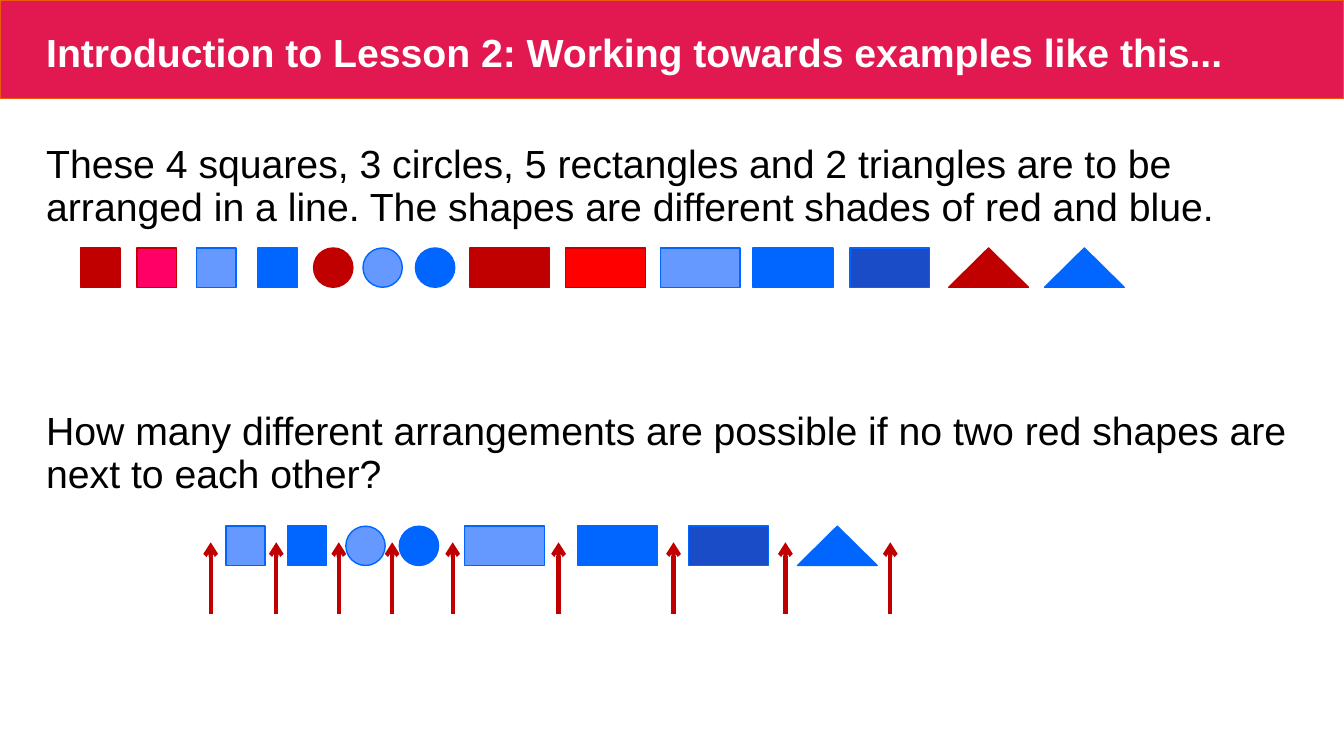
import pptx
import pptx.util
import pptx.dml.color
import pptx.enum.shapes
import pptx.enum.text
import pptx.oxml.ns
import lxml.etree

Inches = pptx.util.Inches
Pt = pptx.util.Pt
PRESET = pptx.enum.shapes.MSO_SHAPE
ANCHOR = pptx.enum.text.MSO_ANCHOR

COLOURS = {
    "band": "E21951", "band edge": "EA5B0C", "white": "FFFFFF", "black": "000000",
    "dark red": "C00000", "pink": "FF0066", "red": "FF0000",
    "light blue": "6699FF", "blue": "0066FF", "dark blue": "1A4CC8",
}

TITLE = "Introduction to Lesson 2: Working towards examples like this..."
# Text and space before it in points
QUESTION = [
    ("These 4 squares, 3 circles, 5 rectangles and 2 triangles are to be arranged "
     "in a line. The shapes are different shades of red and blue.", 10),
    ("How many different arrangements are possible if no two red shapes are "
     "next to each other?", 130),
]

# Preset and width of each kind of counter
KINDS = {
    "square": (PRESET.RECTANGLE, 0.39),
    "circle": (PRESET.OVAL, 0.39),
    "rectangle": (PRESET.RECTANGLE, 0.79),
    "triangle": (PRESET.ISOSCELES_TRIANGLE, 0.79),
}
COUNTER_HEIGHT = 0.39

# Top of each row, then kind, colour and left edge of its counters
ROWS = [
    (2.46, [
        ("square", "dark red", 0.8), ("square", "pink", 1.36),
        ("square", "light blue", 1.95), ("square", "blue", 2.56),
        ("circle", "dark red", 3.11), ("circle", "light blue", 3.6),
        ("circle", "blue", 4.12),
        ("rectangle", "dark red", 4.66), ("rectangle", "red", 5.61),
        ("rectangle", "light blue", 6.55), ("rectangle", "blue", 7.47),
        ("rectangle", "dark blue", 8.43),
        ("triangle", "dark red", 9.41), ("triangle", "blue", 10.36),
    ]),
    (5.22, [
        ("square", "light blue", 2.24), ("square", "blue", 2.85),
        ("circle", "light blue", 3.43), ("circle", "blue", 3.96),
        ("rectangle", "light blue", 4.61), ("rectangle", "blue", 5.73),
        ("rectangle", "dark blue", 6.83), ("triangle", "blue", 7.91),
    ]),
]

GAP_ARROWS = [2.09, 2.74, 3.36, 3.89, 4.49, 5.54, 6.68, 7.79, 8.83]
ARROW_BOTTOM, ARROW_TOP = 6.09, 5.38


def colour(name):
    return pptx.dml.color.RGBColor.from_string(COLOURS[name])


def add_filled_shape(slide, preset, box, fill, edge):
    shape = slide.shapes.add_shape(preset, *map(Inches, box))
    shape.shadow.inherit = False
    shape.fill.solid()
    shape.fill.fore_color.rgb = colour(fill)
    shape.line.color.rgb = colour(edge)
    shape.line.width = Pt(1)


def add_text(slide, box, paragraphs, font_colour, anchor, bold=False):
    frame = slide.shapes.add_textbox(*map(Inches, box)).text_frame
    frame.word_wrap = True
    frame.vertical_anchor = anchor
    for index, (text, space_before) in enumerate(paragraphs):
        paragraph = frame.add_paragraph() if index else frame.paragraphs[0]
        paragraph.text = text
        paragraph.line_spacing = 0.9
        paragraph.space_before = Pt(space_before)
        paragraph.font.name = "Arial"
        paragraph.font.size = Pt(28)
        paragraph.font.bold = bold
        paragraph.font.color.rgb = colour(font_colour)


def add_gap_arrow(slide, x):
    arrow = slide.shapes.add_connector(
        pptx.enum.shapes.MSO_CONNECTOR.STRAIGHT,
        Inches(x), Inches(ARROW_BOTTOM), Inches(x), Inches(ARROW_TOP))
    arrow.line.color.rgb = colour("dark red")
    arrow.line.width = Pt(3)
    qn = pptx.oxml.ns.qn
    properties = arrow.line._get_or_add_ln()
    lxml.etree.SubElement(properties, qn("a:tailEnd"), type="arrow")
    lxml.etree.SubElement(properties.getparent(), qn("a:effectLst"))


def main():
    presentation = pptx.Presentation()
    presentation.slide_width = Inches(13.33)
    presentation.slide_height = Inches(7.5)
    slide = presentation.slides.add_slide(presentation.slide_layouts[6])

    add_filled_shape(slide, PRESET.RECTANGLE, (0, 0, 13.33, 0.98), "band", "band edge")
    add_text(slide, (0.36, 0.19, 12.6, 0.61), [(TITLE, 0)], "white", ANCHOR.BOTTOM, True)
    add_text(slide, (0.36, 1.39, 12.6, 5.82), QUESTION, "black", ANCHOR.TOP)

    for top, counters in ROWS:
        for kind, fill, left in counters:
            preset, width = KINDS[kind]
            edge = "blue" if "blue" in fill else "dark red"
            add_filled_shape(slide, preset, (left, top, width, COUNTER_HEIGHT), fill, edge)
    for x in GAP_ARROWS:
        add_gap_arrow(slide, x)

    presentation.save("out.pptx")


if __name__ == "__main__":
    main()
